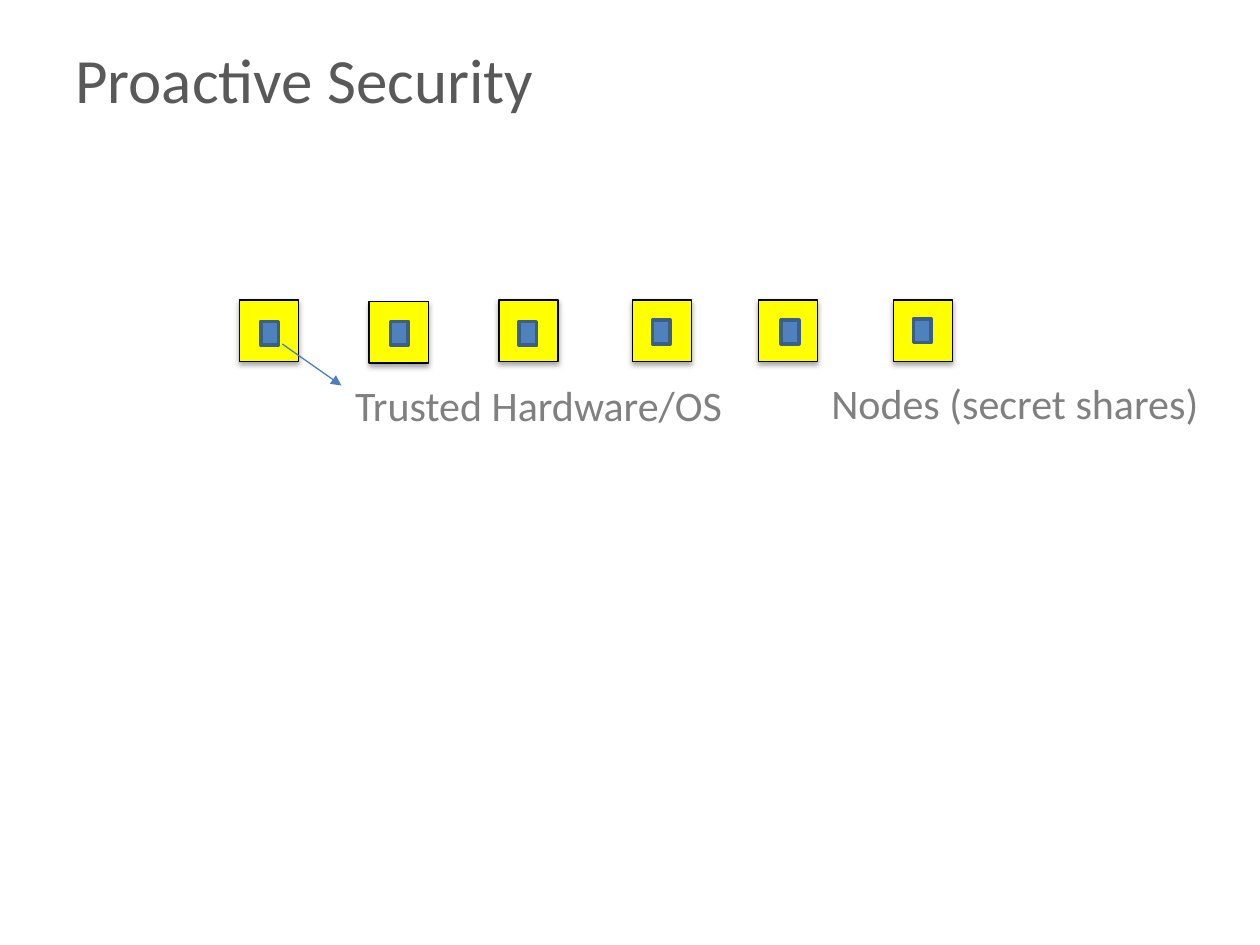
import pptx
import pptx.dml.color
import pptx.enum.shapes
import pptx.enum.text
import pptx.oxml
import pptx.oxml.ns
import pptx.util

Inches = pptx.util.Inches
Pt = pptx.util.Pt
NODES = [(1.9, 2.38), (2.93, 2.39), (3.96, 2.38), (5.02, 2.38), (6.02, 2.38), (7.09, 2.38)]
CORES = [(2.07, 2.55), (3.1, 2.55), (4.12, 2.55), (5.18, 2.54), (6.2, 2.54), (7.25, 2.53)]


def color(code):
    """Turn a hex string into a colour."""
    return pptx.dml.color.RGBColor.from_string(code)


def add_text(slide, box, words, size, code):
    """Place one line of text in the box."""
    frame = slide.shapes.add_textbox(*map(Inches, box)).text_frame
    frame.word_wrap = True
    frame.vertical_anchor = pptx.enum.text.MSO_ANCHOR.TOP
    run = frame.paragraphs[0].add_run()
    run.text = words
    run.font.name = "Calibri"
    run.font.size = Pt(size)
    run.font.color.rgb = color(code)


def add_rect(slide, box, fill, edge, width):
    """Place a filled and outlined rectangle in the box."""
    kind = pptx.enum.shapes.MSO_SHAPE.RECTANGLE
    rect = slide.shapes.add_shape(kind, *map(Inches, box))
    rect.fill.solid()
    rect.fill.fore_color.rgb = color(fill)
    rect.line.color.rgb = color(edge)
    rect.line.width = Pt(width)
    rect.shadow.inherit = False
    return rect


def add_shadow(rect):
    """Give the rectangle a soft shadow below it."""
    space = pptx.oxml.ns.nsdecls("a")
    shadow = pptx.oxml.parse_xml(
        f'<a:outerShdw {space} blurRad="{Pt(3.1)}" dist="{Pt(1.8)}" dir="5400000" rotWithShape="0">'
        '<a:srgbClr val="000000"><a:alpha val="35000"/></a:srgbClr></a:outerShdw>'
    )
    rect._element.spPr.find(pptx.oxml.ns.qn("a:effectLst")).append(shadow)


def add_nodes(slide):
    """Draw the row of nodes, then the trusted core of each."""
    for left, top in NODES:
        add_shadow(add_rect(slide, (left, top, 0.47, 0.49), "FFFF00", "000000", 0.75))
    for left, top in CORES:
        add_rect(slide, (left, top, 0.14, 0.19), "4F81BD", "3A5F8C", 2)


def add_arrow(slide, ends):
    """Draw an arrow between the two ends."""
    kind = pptx.enum.shapes.MSO_CONNECTOR.STRAIGHT
    arrow = slide.shapes.add_connector(kind, *map(Inches, ends))
    arrow.line.color.rgb = color("4B7EBC")
    arrow.line.width = Pt(0.75)
    space = pptx.oxml.ns.nsdecls("a")
    arrow.line._get_or_add_ln().append(
        pptx.oxml.parse_xml(f'<a:tailEnd {space} type="triangle"/>')
    )
    arrow._element.spPr.append(pptx.oxml.parse_xml(f"<a:effectLst {space}/>"))


def main():
    """Build the slide and save it."""
    deck = pptx.Presentation()
    deck.slide_width = Inches(10)
    deck.slide_height = Inches(7.5)
    slide = deck.slides.add_slide(deck.slide_layouts[6])
    add_text(slide, (0.5, 0.27, 9.67, 0.87), "Proactive Security", 36, "595959")
    add_nodes(slide)
    add_arrow(slide, (2.24, 2.73, 2.71, 3.06))
    add_text(slide, (6.5, 2.95, 3.5, 0.5), "Nodes (secret shares)", 24, "808080")
    add_text(slide, (2.72, 2.96, 3.13, 0.5), "Trusted Hardware/OS", 24, "808080")
    deck.save("out.pptx")


if __name__ == "__main__":
    main()
